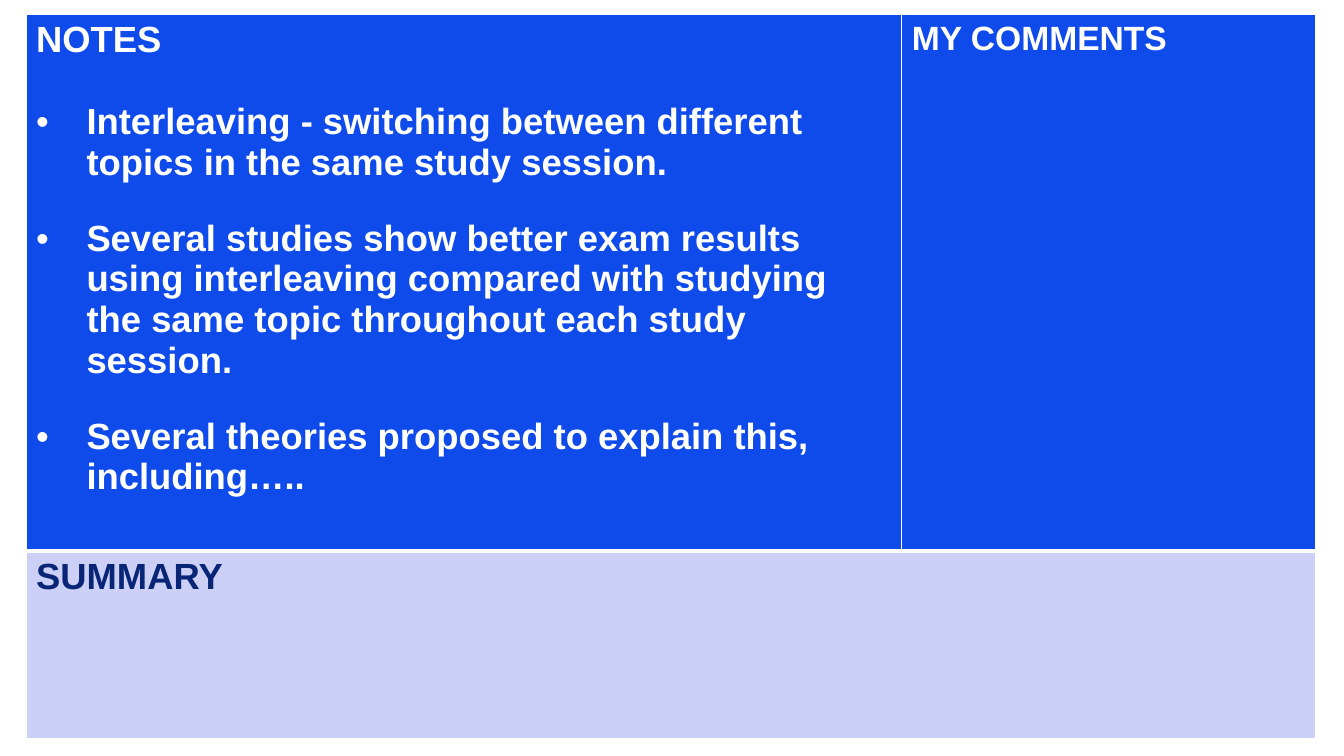
from dataclasses import dataclass

from lxml.etree import SubElement
from pptx import Presentation
from pptx.dml.color import RGBColor as RGB
from pptx.oxml.ns import qn
from pptx.table import _Cell as Cell
from pptx.text.text import _Paragraph as Paragraph
from pptx.util import Pt

COLORS = {"blue": "0F4BEB", "lavender": "CCD0F7", "navy": "082576", "white": "FFFFFF"}
FONT = "Arial"
LEFT, TOP = 18.6, 10.6
COLUMNS = (625.5, 295.9)
ROWS = (383, 134.2)
INDENT = 36


@dataclass
class Bullet:
    text: str
    before: float


@dataclass
class Panel:
    row: int
    col: int
    heading: str
    size: float
    fill: str
    color: str
    top: float
    bottom: float
    bullets: tuple[Bullet, ...] = ()


PANELS = (
    Panel(0, 0, "NOTES", 26, "blue", "white", 1, 3, (
        Bullet("Interleaving - switching between different topics in the same "
               "study session.", 29.4),
        Bullet("Several studies show better exam results using interleaving "
               "compared with studying the same topic throughout each study "
               "session.", 25.2),
        Bullet("Several theories proposed to explain this, including…..", 25.2),
    )),
    Panel(0, 1, "MY COMMENTS", 24, "blue", "white", 1, 3),
    Panel(1, 0, "SUMMARY", 26, "lavender", "navy", 3, 1),
)


def set_borders(cell: Cell, top: float, bottom: float) -> None:
    """Draw white borders around a cell."""
    tcPr = cell._tc.get_or_add_tcPr()
    for side, width in (("L", 1), ("R", 1), ("T", top), ("B", bottom)):
        ln = SubElement(tcPr, qn(f"a:ln{side}"), w=str(Pt(width)))
        fill = SubElement(ln, qn("a:solidFill"))
        SubElement(fill, qn("a:srgbClr"), val=COLORS["white"])


def add_text(p: Paragraph, text: str, size: float, color: str) -> None:
    """Add one bold run to a paragraph."""
    r = p.add_run()
    r.text = text
    r.font.name = FONT
    r.font.size = Pt(size)
    r.font.bold = True
    r.font.color.rgb = RGB.from_string(COLORS[color])


def set_bullet(p: Paragraph, before: float) -> None:
    """Give a paragraph a hanging bullet and its spacing."""
    pPr = p._p.get_or_add_pPr()
    pPr.set("marL", str(Pt(INDENT)))
    pPr.set("indent", str(-Pt(INDENT)))
    SubElement(pPr, qn("a:buFont"), typeface=FONT)
    SubElement(pPr, qn("a:buChar"), char="•")
    p.space_before = Pt(before)


def fill_panel(cell: Cell, panel: Panel) -> None:
    """Format a cell and write its heading and bullets."""
    set_borders(cell, panel.top, panel.bottom)
    cell.fill.solid()
    cell.fill.fore_color.rgb = RGB.from_string(COLORS[panel.fill])
    tf = cell.text_frame
    add_text(tf.paragraphs[0], panel.heading, panel.size, panel.color)
    for bullet in panel.bullets:
        p = tf.add_paragraph()
        set_bullet(p, bullet.before)
        add_text(p, bullet.text, panel.size, panel.color)


def main() -> None:
    """Build the study sheet slide."""
    prs = Presentation()
    prs.slide_width, prs.slide_height = Pt(960), Pt(540)
    s = prs.slides.add_slide(prs.slide_layouts[6])
    table = s.shapes.add_table(len(ROWS), len(COLUMNS), Pt(LEFT), Pt(TOP),
                               Pt(sum(COLUMNS)), Pt(sum(ROWS))).table
    table.first_row = table.horz_banding = False
    for column, width in zip(table.columns, COLUMNS):
        column.width = Pt(width)
    for row, height in zip(table.rows, ROWS):
        row.height = Pt(height)
    table.cell(1, 0).merge(table.cell(1, 1))
    for panel in PANELS:
        fill_panel(table.cell(panel.row, panel.col), panel)
    prs.save("out.pptx")


if __name__ == "__main__":
    main()
